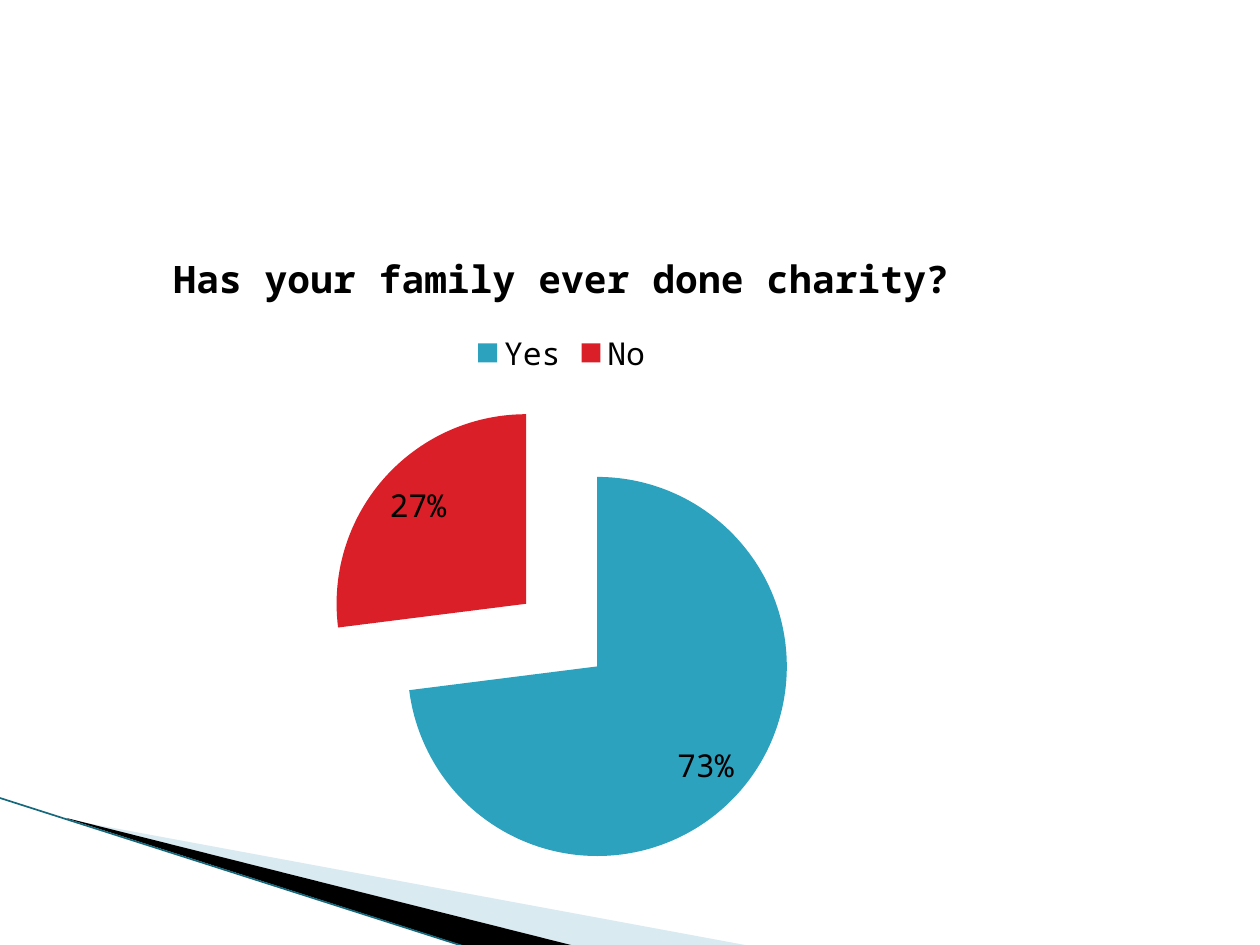
"""Builds a slide with an exploded pie chart on charity and a corner swoosh."""
from lxml import etree
from pptx import Presentation
from pptx import util as u
from pptx.chart.data import CategoryChartData
from pptx.dml.color import RGBColor
from pptx.enum import chart as ch, shapes as sh
from pptx.oxml.ns import qn

HUES = {"ink": "000000", "teal": "2DA2BF", "red": "DA1F28",
        "pale": "A0CBDC", "edge": "16697D"}


class Deck:
    """Holds the style and the current slide."""

    def __init__(self, wide, high):
        self.prs = Presentation()
        self.prs.slide_width, self.prs.slide_height = u.Pt(wide), u.Pt(high)
        self.slide = self.prs.slides.add_slide(self.prs.slide_layouts[6])
        self.face = "Noto Sans Mono"

    def hue(self, name):
        """Return the named colour."""
        return RGBColor.from_string(HUES[name])

    def style(self, font, size, bold=False):
        """Set the chart font."""
        font.name, font.size, font.bold = self.face, u.Pt(size), bold
        font.color.rgb = self.hue("ink")

    def wedge(self, spots, hue, alpha=None):
        """Draw a filled outline."""
        first, *rest = [(u.Pt(x), u.Pt(y)) for x, y in spots]
        form = self.slide.shapes.build_freeform(*first)
        shape = form.add_line_segments(rest).convert_to_shape()
        shape.shadow.inherit = False
        shape.line.fill.background()
        shape.fill.solid()
        shape.fill.fore_color.rgb = self.hue(hue)
        if alpha:
            tint = next(shape.fill._xPr.iter(qn("a:srgbClr")))
            etree.SubElement(tint, qn("a:alpha"), val=str(alpha * 1000))

    def rule(self, start, end, hue, width):
        """Draw a straight line."""
        ends = [u.Pt(v) for v in (*start, *end)]
        line = self.slide.shapes.add_connector(sh.MSO_CONNECTOR.STRAIGHT, *ends)
        line.line.color.rgb = self.hue(hue)
        line.line.width = u.Pt(width)
        etree.SubElement(line._element.spPr, qn("a:effectLst"))

    def pie(self, box, title, parts, burst):
        """Draw a pie with its slices pulled apart."""
        data = CategoryChartData()
        data.categories = [name for name, _, _ in parts]
        data.add_series("Series 1", [val for _, val, _ in parts])
        chart = self.slide.shapes.add_chart(
            ch.XL_CHART_TYPE.PIE, *map(u.Pt, box), data).chart
        self.style(chart.font, 18)
        chart.has_title = True
        head = chart.chart_title.text_frame
        head.text = title
        self.style(head.paragraphs[0].font, 21.6, True)
        chart.has_legend = True
        chart.legend.position = ch.XL_LEGEND_POSITION.TOP
        chart.legend.include_in_layout = False
        plot = chart.plots[0]
        plot.vary_by_categories = True
        series = plot.series[0]
        pull = etree.Element(qn("c:explosion"), val=str(burst))
        series._element.find(qn("c:tx")).addnext(pull)
        for i, (_, _, hue) in enumerate(parts):
            fill = series.points[i].format.fill
            fill.solid()
            fill.fore_color.rgb = self.hue(hue)
        tags = series.data_labels
        tags.show_percentage, tags.show_value = True, False
        tags.number_format, tags.number_format_is_linked = "0%", False
        tags.position = ch.XL_LABEL_POSITION.INSIDE_END
        self.style(tags.font, 18)


def main():
    deck = Deck(720, 540)
    deck.wedge([(39.6, 468.5), (428.4, 540.5), (328.5, 540.5), (39.6, 468)],
               "pale", 40)
    deck.wedge([(38.2, 467.5), (329, 540.7), (268, 541.4), (39, 468)], "ink")
    deck.rule((-0.7, 455.8), (267, 541.4), "edge", 0.95)
    deck.pie((36, 126.7, 570, 381.6), "Has your family ever done charity?",
             [("Yes", 73, "teal"), ("No", 27, "red")], 25)
    deck.prs.save("out.pptx")


if __name__ == "__main__":
    main()
